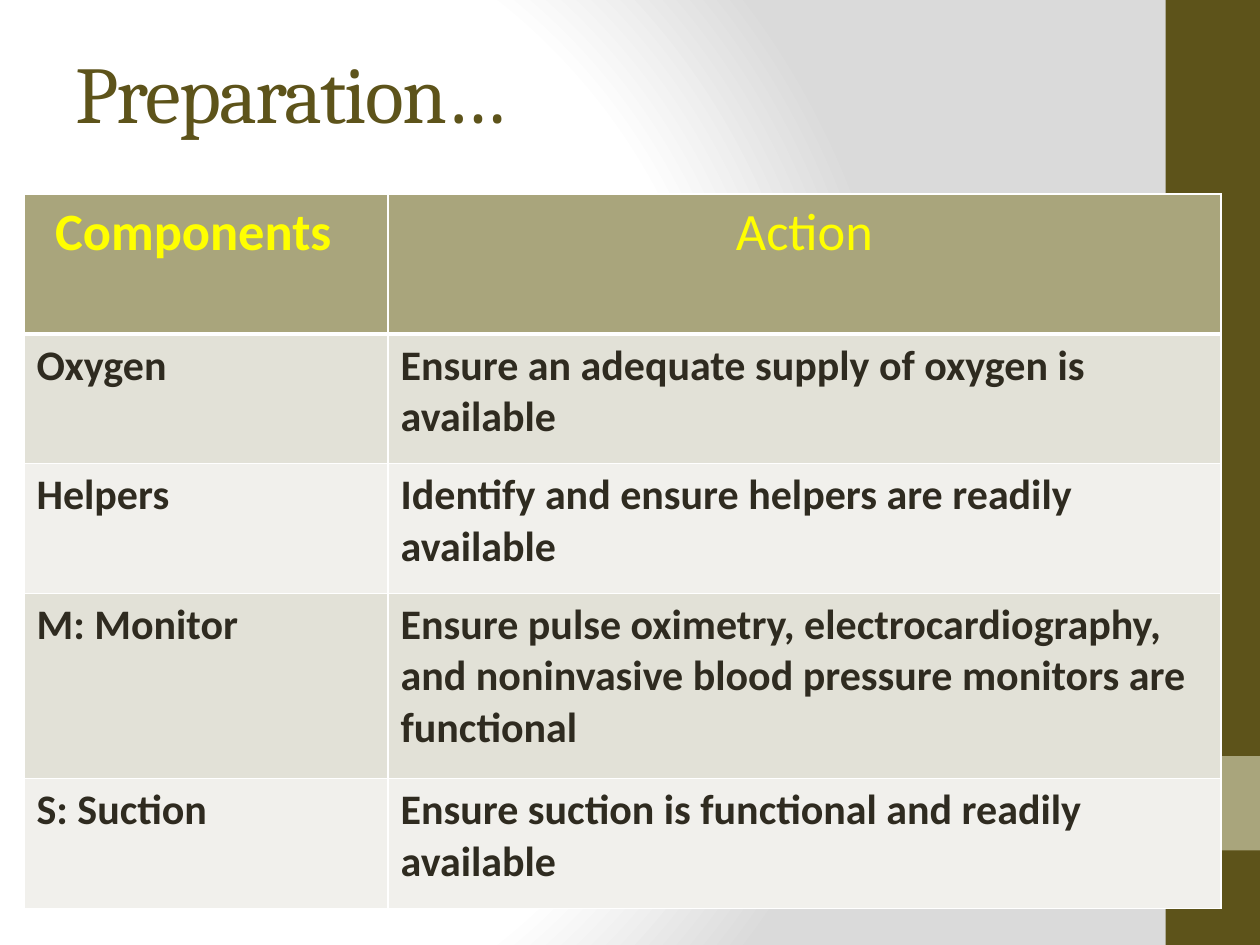
from typing import NamedTuple

import pptx
import pptx.dml.color
import pptx.enum.shapes
import pptx.enum.text
import pptx.oxml
import pptx.oxml.ns
import pptx.util
from pptx.util import Inches

OLIVE, SAGE, WHITE = "5D531A", "A9A57C", "FFFFFF"
BANDS = ("E2E1D7", "F1F0EC")
HEADER = {"size": pptx.util.Pt(30), "name": "Calibri"}
BODY = {"size": pptx.util.Pt(24), "name": "Calibri", "bold": True}
TITLE = {"size": pptx.util.Pt(46), "name": "Cambria"}
NS = pptx.oxml.ns.nsdecls("a")


class Bar(NamedTuple):
    top: float
    height: float
    color: str


class Row(NamedTuple):
    component: str
    action: str
    height: float


BARS = [Bar(0, 7.5, OLIVE), Bar(6, 0.75, SAGE)]
ROWS = [
    Row("Components", "Action", 1.11),
    Row("Oxygen", "Ensure an adequate supply of oxygen is available", 1.03),
    Row("Helpers", "Identify and ensure helpers are readily available", 1.03),
    Row("M: Monitor", "Ensure pulse oximetry, electrocardiography, and noninvasive "
        "blood pressure monitors are functional", 1.47),
    Row("S: Suction", "Ensure suction is functional and readily available", 1.03),
]
COLUMNS = (2.89, 6.61)


def rgb(value: str) -> pptx.dml.color.RGBColor:
    return pptx.dml.color.RGBColor.from_string(value)


def add_run(p, text: str, color: str, font: dict):
    r = p.add_run()
    r.text = text
    for name, value in font.items():
        setattr(r.font, name, value)
    r.font.color.rgb = rgb(color)
    return r


def set_background(s) -> None:
    """Fill the slide with a radial gradient, which needs XML."""
    s.background.fill.solid()
    solid = s.element.find(".//" + pptx.oxml.ns.qn("p:bgPr"))[0]
    stops = "".join(
        f'<a:gs pos="{pos * 1000}"><a:srgbClr val="{color}"/></a:gs>'
        for pos, color in ((0, WHITE), (75, WHITE), (100, "DADADA")))
    gradient = pptx.oxml.parse_xml(
        f'<a:gradFill {NS} rotWithShape="1"><a:gsLst>{stops}</a:gsLst>'
        '<a:path path="circle"><a:fillToRect l="20000" t="50000" r="100000" b="50000"/>'
        '</a:path></a:gradFill>')
    solid.getparent().replace(solid, gradient)


def add_bar(s, bar: Bar) -> None:
    sp = s.shapes.add_shape(pptx.enum.shapes.MSO_SHAPE.RECTANGLE, Inches(9.25),
                            Inches(bar.top), Inches(0.75), Inches(bar.height))
    sp.shadow.inherit = False
    sp.fill.solid()
    sp.fill.fore_color.rgb = rgb(bar.color)
    sp.line.fill.background()


def add_title(s, text: str) -> None:
    tf = s.shapes.add_textbox(Inches(0.5), Inches(0.17), Inches(8.89), Inches(1.11)).text_frame
    tf.word_wrap = True
    tf.vertical_anchor = pptx.enum.text.MSO_ANCHOR.MIDDLE
    r = add_run(tf.paragraphs[0], text, OLIVE, TITLE)
    r.font._element.set("spc", "-100")


def style_cell(cell, fill: str, bottom: int) -> None:
    """Give a cell white borders and a plain fill."""
    tcPr = cell._tc.get_or_add_tcPr()
    for side, width in (("L", 1), ("R", 1), ("T", 1), ("B", bottom)):
        tcPr.append(pptx.oxml.parse_xml(
            f'<a:ln{side} {NS} w="{pptx.util.Pt(width)}"><a:solidFill>'
            f'<a:srgbClr val="{WHITE}"/></a:solidFill></a:ln{side}>'))
    cell.fill.solid()
    cell.fill.fore_color.rgb = rgb(fill)


def add_component_table(s) -> None:
    table = s.shapes.add_table(
        len(ROWS), len(COLUMNS), Inches(0.19), Inches(1.54), Inches(sum(COLUMNS)),
        Inches(sum(row.height for row in ROWS))).table
    for column, width in zip(table.columns, COLUMNS):
        column.width = Inches(width)
    for i, row in enumerate(ROWS):
        table.rows[i].height = Inches(row.height)
        header = i == 0
        for j, text in enumerate((row.component, row.action)):
            cell = table.cell(i, j)
            style_cell(cell, SAGE if header else BANDS[(i - 1) % 2], 3 if header else 1)
            p = cell.text_frame.paragraphs[0]
            if header:
                p.alignment = pptx.enum.text.PP_ALIGN.CENTER
                add_run(p, text, "FFFF00", HEADER | {"bold": j == 0})
            else:
                add_run(p, text, "2F2B20", BODY)
    table.cell(0, 0).margin_right = Inches(0.3)


def main() -> None:
    prs = pptx.Presentation()
    prs.slide_width, prs.slide_height = Inches(10), Inches(7.5)
    s = prs.slides.add_slide(prs.slide_layouts[6])
    set_background(s)
    for bar in BARS:
        add_bar(s, bar)
    add_title(s, "Preparation…")
    add_component_table(s)
    prs.save("out.pptx")


if __name__ == "__main__":
    main()
